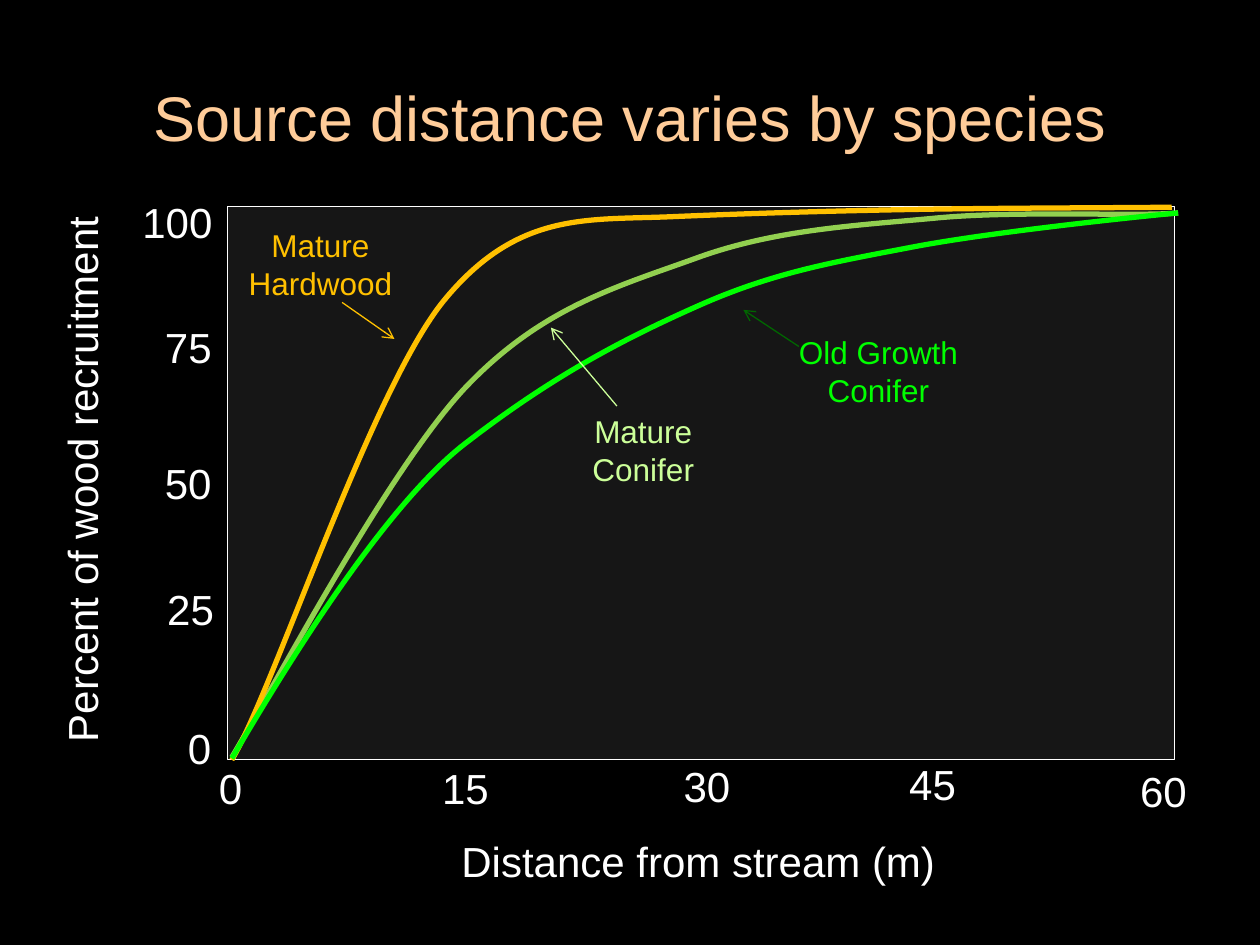
from pptx import Presentation
from pptx.dml.color import RGBColor
from pptx.enum.shapes import MSO_CONNECTOR, MSO_SHAPE
from pptx.enum.text import MSO_ANCHOR, MSO_AUTO_SIZE, PP_ALIGN
from pptx.oxml.ns import qn
from pptx.util import Pt
from lxml import etree

RECT, LINE = MSO_SHAPE.RECTANGLE, MSO_CONNECTOR.STRAIGHT
TOP, MID, CENTER = MSO_ANCHOR.TOP, MSO_ANCHOR.MIDDLE, PP_ALIGN.CENTER
GROW, FIXED = MSO_AUTO_SIZE.SHAPE_TO_FIT_TEXT, MSO_AUTO_SIZE.NONE

COLORS = {
    "back": "000000", "plot": "161616", "white": "FFFFFF", "title": "FFCC99",
    "amber": "FFC000", "olive": "92D050", "lime": "00FF00",
    "pale": "CCFF99", "dark": "006600",
}
FONT = "Arial"

TITLE = "Source distance varies by species"
FRAME = (130.2, 118.1, 540.9, 316)

# Text, centre x, centre y
TICKS = [
    ("60", 664.8, 452), ("15", 266, 450), ("30", 404, 449),
    ("45", 532.9, 447.8), ("0", 131.8, 450),
    ("100", 101.4, 126.7), ("75", 107.6, 198), ("50", 107.5, 275.8),
    ("25", 108.9, 347.8), ("0", 114, 427.4),
]
# Text, centre x, centre y, width, turn
AXES = [
    ("Distance from stream (m)", 399, 491.8, 288, 0),
    ("Percent of wood recruitment", 46.5, 274, 317.5, 270),
]
# Colour, then a start point followed by three points per Bezier segment
CURVES = [
    ("olive", [(132.5, 432.7), (156.2, 393.1), (221, 270), (265, 222.5),
               (309.6, 175), (354.2, 163.4), (399.6, 146.9),
               (444.2, 131), (489.6, 128.9), (535, 124.6),
               (580.3, 120.2), (650.9, 123.8), (673.2, 121.7)]),
    ("amber", [(132.5, 434.2), (156.2, 394.6), (211.7, 223.9), (253.4, 172.1),
               (295.9, 120.2), (335.5, 126), (384.5, 123.8),
               (433.4, 121.7), (487.4, 120.2), (535, 119.5),
               (582.5, 118.8), (625, 118.8), (669.6, 118.4)]),
    ("lime", [(132.5, 433.4), (156.2, 393.1), (218.2, 288.7), (267.8, 252),
              (317.5, 213.8), (357.8, 193), (400.3, 174.2),
              (442.8, 155.5), (476.6, 149.8), (522, 141.1),
              (567.4, 132.5), (650.9, 123.8), (673.2, 121.7)]),
]
# Lines, centre x, centre y, width, text colour, arrow colour, arrow ends
NOTES = [
    (["Mature", "Conifer"], 367.6, 257.3, 73.4, "pale", "pale",
     (352.5, 232, 314.8, 187.2)),
    (["Old Growth", "Conifer"], 502, 212.4, 106.6, "lime", "dark",
     (456.5, 198, 424.8, 177.1)),
    (["Mature", "Hardwood"], 183.1, 151.3, 97.2, "amber", "amber",
     (195.5, 172.8, 225.4, 193.7)),
]

deck = Presentation()
deck.slide_width, deck.slide_height = Pt(720), Pt(540)
slide = deck.slides.add_slide(deck.slide_layouts[6])
shapes = slide.shapes


def color(name):
    return RGBColor.from_string(COLORS[name])


def label(lines, x, y, wide, high, size, hue="white", turn=0, wrap=False):
    """Add centred text around the point x, y."""
    box = shapes.add_textbox(Pt(x - wide / 2), Pt(y - high / 2), Pt(wide), Pt(high))
    box.rotation = turn
    frame = box.text_frame
    frame.word_wrap = wrap
    frame.auto_size = FIXED if wrap else GROW
    frame.vertical_anchor = MID if wrap else TOP
    for i, text in enumerate(lines):
        para = frame.paragraphs[0] if i == 0 else frame.add_paragraph()
        para.alignment = CENTER
        run = para.add_run()
        run.text = text
        run.font.name, run.font.size = FONT, Pt(size)
        run.font.color.rgb = color(hue)


def stroke(shape, hue, width):
    shape.line.color.rgb = color(hue)
    shape.line.width = Pt(width)


def trace(hue, knots):
    """Draw a chain of cubic Bezier segments."""
    spots = [(Pt(x), Pt(y)) for x, y in knots]
    pen = shapes.build_freeform(*spots[0])
    pen.add_line_segments(spots[3::3], close=False)
    curve = pen.convert_to_shape()
    # Turn each straight piece into a curve by adding its two handles
    for i, piece in enumerate(list(curve._element.iter(qn("a:lnTo")))):
        piece.tag = qn("a:cubicBezTo")
        for k in (0, 1):
            x, y = spots[3 * i + 1 + k]
            point = etree.Element(qn("a:pt"), x=str(x - curve.left),
                                  y=str(y - curve.top))
            piece.insert(k, point)
    curve.shadow.inherit = False
    curve.fill.background()
    stroke(curve, hue, 3)


def arrow(ends, hue):
    link = shapes.add_connector(LINE, *map(Pt, ends))
    stroke(link, hue, 0.75)
    head = etree.SubElement(link.line._get_or_add_ln(), qn("a:tailEnd"))
    head.set("type", "arrow")
    etree.SubElement(link._element.spPr, qn("a:effectLst"))


# Background and title
slide.background.fill.solid()
slide.background.fill.fore_color.rgb = color("back")
label([TITLE], 360, 66.6, 648, 90, 36, "title", wrap=True)

# Plot area
plot = shapes.add_shape(RECT, *map(Pt, FRAME))
plot.shadow.inherit = False
plot.fill.solid()
plot.fill.fore_color.rgb = color("plot")
stroke(plot, "white", 0.75)

# Axis titles and tick labels
for text, x, y, wide, turn in AXES:
    label([text], x, y, wide, 36, 24, turn=turn)
for text, x, y in TICKS:
    label([text], x, y, 14.4 + 13.4 * len(text), 36, 24)

# Curves
for hue, knots in CURVES:
    trace(hue, knots)

# Curve names with arrows
for lines, x, y, wide, hue, tint, ends in NOTES:
    label(lines, x, y, wide, 51, 18, hue)
    arrow(ends, tint)

deck.save("out.pptx")
